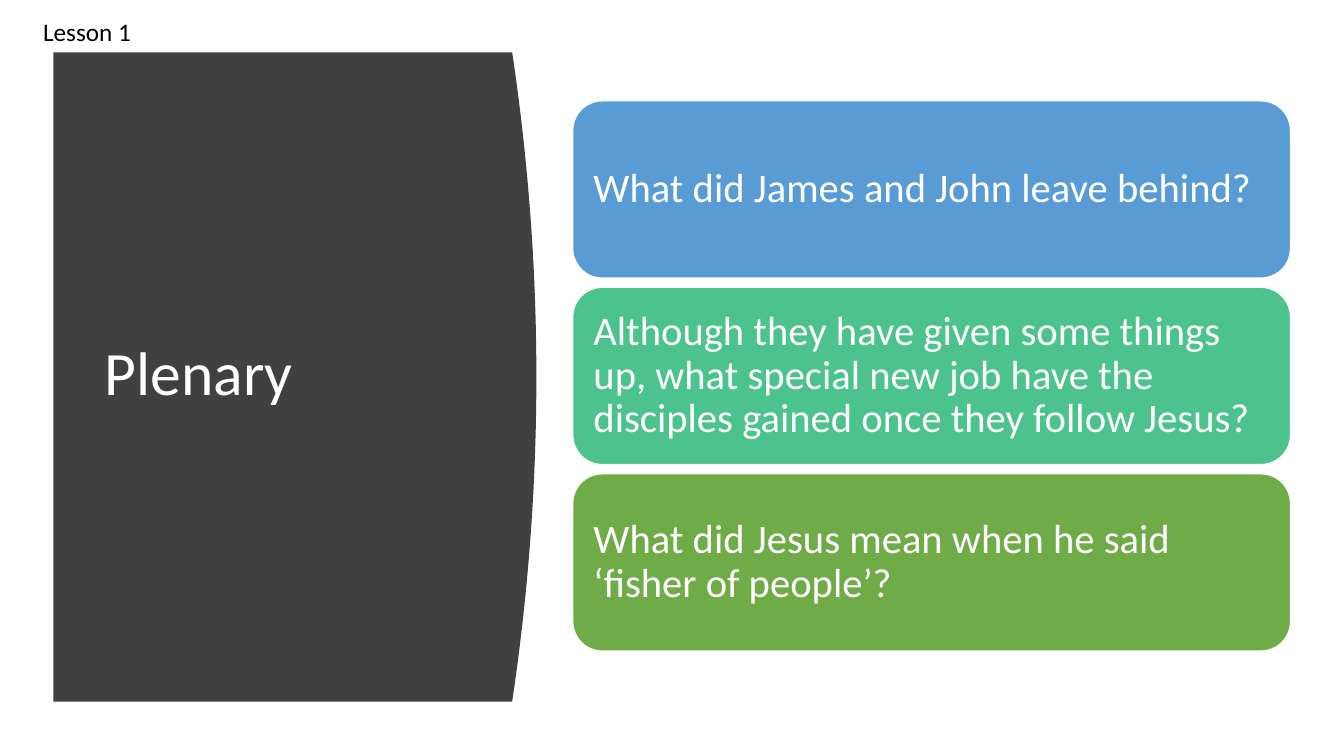
import dataclasses

import pptx
import pptx.dml.color
import pptx.enum.shapes
import pptx.enum.text
import pptx.util

Inches = pptx.util.Inches
Rgb = pptx.dml.color.RGBColor.from_string
Anchor = pptx.enum.text.MSO_ANCHOR


@dataclasses.dataclass
class Theme:
    font: str = "Calibri"
    panel: str = "404040"
    light: str = "FFFFFF"
    dark: str = "000000"
    head: int = 44
    body: int = 29
    label: int = 18


theme = Theme()


def write(frame, text, size, color, space=0.9):
    para = frame.paragraphs[0]
    para.alignment = pptx.enum.text.PP_ALIGN.LEFT
    para.line_spacing = space
    run = para.add_run()
    run.text = text
    run.font.name = theme.font
    run.font.size = pptx.util.Pt(size)
    run.font.color.rgb = Rgb(color)


deck = pptx.Presentation()
deck.slide_width, deck.slide_height = Inches(13.33), Inches(7.5)
slide = deck.slides.add_slide(deck.slide_layouts[5])
shapes = slide.shapes

# Dark panel whose right edge is a shallow parabola
left, top, bottom = 0.53, 0.52, 6.96
edge, bulge, steps = 5.08, 0.24, 40
curve = []
for i in range(steps + 1):
    t = 2 * i / steps - 1
    x = edge + bulge * (1 - t * t)
    y = top + (bottom - top) * i / steps
    curve.append((Inches(x), Inches(y)))
pen = shapes.build_freeform(Inches(left), Inches(top))
pen.add_line_segments(curve + [(Inches(left), Inches(bottom))], close=True)
panel = pen.convert_to_shape()
panel.shadow.inherit = False
panel.fill.solid()
panel.fill.fore_color.rgb = Rgb(theme.panel)
panel.line.fill.background()

# Title, in front of the panel
title = shapes.title
title.element.addprevious(panel.element)
title.left, title.top = Inches(0.94), Inches(1.11)
title.width, title.height = Inches(3.74), Inches(5.24)
title.text_frame.word_wrap = True
title.text_frame.vertical_anchor = Anchor.MIDDLE
write(title.text_frame, "Plenary", theme.head, theme.light)

# Question cards
cards = [
    ("What did James and John leave behind?", "599BD5"),
    ("Although they have given some things up, what special new job "
     "have the disciples gained once they follow Jesus?", "4CC38C"),
    ("What did Jesus mean when he said ‘fisher of people’?", "6FAB46"),
]
for i, (text, color) in enumerate(cards):
    card = shapes.add_shape(
        pptx.enum.shapes.MSO_SHAPE.ROUNDED_RECTANGLE,
        Inches(5.68), Inches(1 + 1.85 * i), Inches(7.12), Inches(1.76))
    card.shadow.inherit = False
    card.fill.solid()
    card.fill.fore_color.rgb = Rgb(color)
    card.line.color.rgb = Rgb(theme.light)
    card.line.width = pptx.util.Pt(1)
    frame = card.text_frame
    frame.word_wrap = True
    frame.vertical_anchor = Anchor.MIDDLE
    frame.margin_left = frame.margin_right = Inches(0.12)
    frame.margin_top = frame.margin_bottom = Inches(0.12)
    write(frame, text, theme.body, theme.light)

# Lesson label
label = shapes.add_textbox(Inches(0.33), Inches(0.11), Inches(1.24), Inches(0.4))
label.text_frame.word_wrap = True
write(label.text_frame, "Lesson 1", theme.label, theme.dark, 1.0)

deck.save("out.pptx")
